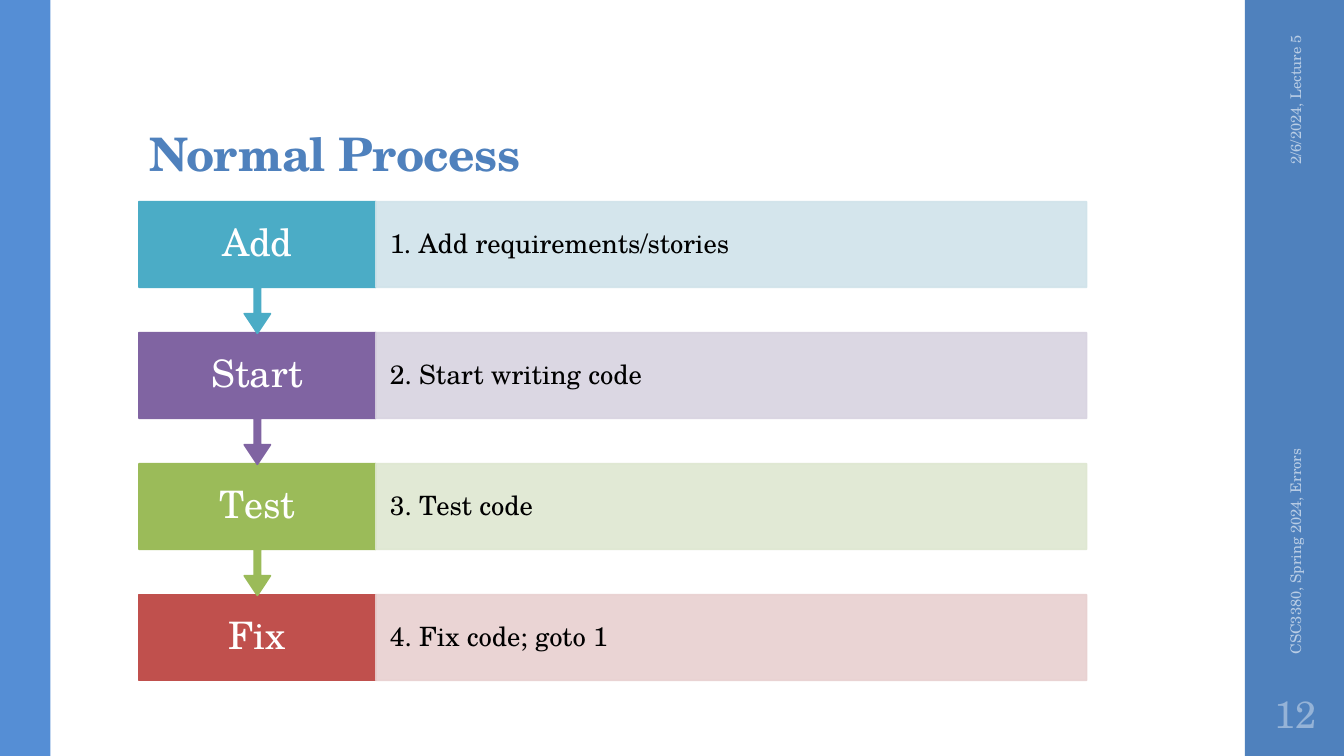
import pptx
import pptx.util
import pptx.dml.color
import pptx.enum.shapes
import pptx.enum.text
import pptx.oxml.ns
import lxml.etree

Pt = pptx.util.Pt
RGB = pptx.dml.color.RGBColor
SHAPE = pptx.enum.shapes.MSO_SHAPE
ALIGN = pptx.enum.text.PP_ALIGN
ANCHOR = pptx.enum.text.MSO_ANCHOR

FONT = "TeX Gyre Schola"
WHITE = RGB(0xFF, 0xFF, 0xFF)
BLACK = RGB(0x00, 0x00, 0x00)
BLUE = RGB(0x4F, 0x81, 0xBD)
LIGHT_BLUE = RGB(0x55, 0x8E, 0xD5)
LABEL_BLUE = RGB(0xB9, 0xCD, 0xE5)
NUMBER_BLUE = RGB(0x95, 0xB3, 0xD7)
TEAL, PALE_TEAL = RGB(0x4B, 0xAC, 0xC6), RGB(0xD0, 0xE3, 0xEA)
PURPLE, PALE_PURPLE = RGB(0x80, 0x64, 0xA2), RGB(0xD8, 0xD3, 0xE0)
GREEN, PALE_GREEN = RGB(0x9B, 0xBB, 0x59), RGB(0xDE, 0xE7, 0xD1)
RED, PALE_RED = RGB(0xC0, 0x50, 0x4D), RGB(0xE8, 0xD0, 0xD0)

STEPS = [
    ("Add", "1. Add requirements/stories", TEAL, PALE_TEAL),
    ("Start", "2. Start writing code", PURPLE, PALE_PURPLE),
    ("Test", "3. Test code", GREEN, PALE_GREEN),
    ("Fix", "4. Fix code; goto 1", RED, PALE_RED),
]


def set_text(sp, text, size, color, align=ALIGN.LEFT, anchor=ANCHOR.MIDDLE,
             insets=(7.2, 3.6, 7.2, 3.6), spacing=1.0, bold=False):
    tf = sp.text_frame
    left, top, right, bottom = map(Pt, insets)
    frame = {"word_wrap": True, "vertical_anchor": anchor,
             "auto_size": pptx.enum.text.MSO_AUTO_SIZE.NONE,
             "margin_left": left, "margin_top": top,
             "margin_right": right, "margin_bottom": bottom}
    for name, value in frame.items():
        setattr(tf, name, value)
    p = tf.paragraphs[0]
    p.alignment, p.line_spacing = align, spacing
    r = p.add_run()
    r.text = text
    for name, value in {"name": FONT, "size": Pt(size), "bold": bold}.items():
        setattr(r.font, name, value)
    r.font.color.rgb = color
    return r


def add_block(s, kind, box, color, outline=True):
    sp = s.shapes.add_shape(kind, *map(Pt, box))
    sp.shadow.inherit = False
    sp.fill.solid()
    sp.fill.fore_color.rgb = color
    if outline:
        sp.line.color.rgb = color
        sp.line.width = Pt(1.1)
    else:
        sp.line.fill.background()
    return sp


def set_opacity(sp, percent):
    qn = pptx.oxml.ns.qn
    for clr in sp.fill._xPr.iter(qn("a:srgbClr")):
        lxml.etree.SubElement(clr, qn("a:alpha"), val=str(percent * 1000))


def add_title(s, box, text):
    sp = s.shapes.title
    for name, value in zip(("left", "top", "width", "height"), box):
        setattr(sp, name, Pt(value))
    r = set_text(sp, text, 33, BLUE, anchor=ANCHOR.BOTTOM,
                 insets=(7.2, 2.2, 7.2, 3.6), spacing=0.9, bold=True)
    r.font._element.set("spc", "-40")


def add_process(s, box, steps):
    left, top, width, height = box
    name_w = width / 4
    row_h = 61.2
    pitch = (height - row_h) / (len(steps) - 1)

    # Last step first, so each arrow tip lies over the step below it
    for i, (name, detail, color, pale) in reversed(list(enumerate(steps))):
        y = top + i * pitch

        # Step name, with an arrow to the next step
        if i == len(steps) - 1:
            sp = add_block(s, SHAPE.RECTANGLE, (left, y, name_w, row_h), color)
        else:
            callout = (left, y, name_w, row_h / 0.65)
            sp = add_block(s, SHAPE.DOWN_ARROW_CALLOUT, callout, color)
            for k, value in enumerate((0.05, 0.1, 0.15, 0.65)):
                sp.adjustments[k] = value
        set_text(sp, name, 27, WHITE, ALIGN.CENTER,
                 insets=(12, 15, 12, 15), spacing=0.9)

        # Step description
        sp = add_block(s, SHAPE.RECTANGLE,
                       (left + name_w, y, width - name_w, row_h), pale)
        set_opacity(sp, 90)
        set_text(sp, detail, 19, BLACK, insets=(10, 18, 10, 18), spacing=0.9)


def add_side_label(s, center, length, text, align):
    thick = 28.8
    x, y = center
    sp = s.shapes.add_textbox(Pt(x - length / 2), Pt(y - thick / 2),
                              Pt(length), Pt(thick))
    sp.rotation = 270
    set_text(sp, text, 10.5, LABEL_BLUE, align)


def add_sidebar(s, box):
    left, top, width, height = box
    add_block(s, SHAPE.RECTANGLE, box, BLUE, outline=False)
    mid = left + width / 2

    # Rotated date and course labels
    add_side_label(s, (mid, top + 93), 150, "2/6/2024, Lecture 5", ALIGN.RIGHT)
    add_side_label(s, (mid, top + 333.4), 282,
                   "CSC3380, Spring 2024, Errors", ALIGN.LEFT)

    # Slide number
    sp = s.shapes.add_textbox(Pt(left), Pt(top + height - 54),
                              Pt(width), Pt(46.8))
    set_text(sp, "12", 27, NUMBER_BLUE, ALIGN.CENTER, insets=(3.6,) * 4)


def main():
    prs = pptx.Presentation()
    prs.slide_width, prs.slide_height = Pt(960), Pt(540)
    s = prs.slides.add_slide(prs.slide_layouts[5])

    # Side bands
    add_sidebar(s, (889.2, 0, 72, 540))
    add_block(s, SHAPE.RECTANGLE, (0, 0, 36, 540), LIGHT_BLUE, outline=False)

    # Title and process steps
    add_title(s, (99.4, 23, 763, 110), "Normal Process")
    add_process(s, (99.2, 144, 677, 342), STEPS)

    prs.save("out.pptx")


if __name__ == "__main__":
    main()
